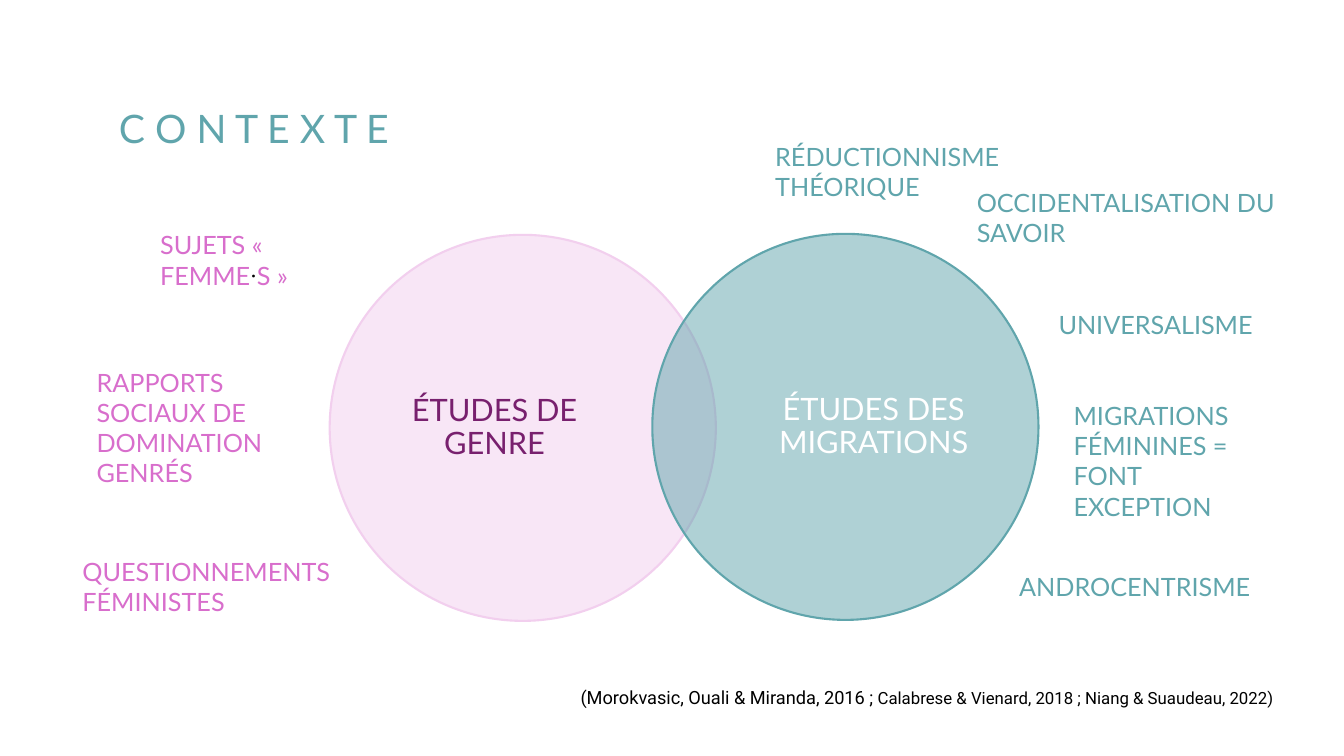
from lxml import etree
from pptx import Presentation
from pptx.dml.color import RGBColor
from pptx.enum.shapes import MSO_SHAPE
from pptx.enum.text import MSO_ANCHOR as ANCHOR, MSO_AUTO_SIZE as AUTO, PP_ALIGN as ALIGN
from pptx.oxml.ns import qn
from pptx.util import Inches, Pt

TEAL, PINK, PALE_PINK, PLUM = "60A5AC", "D86ECC", "F2CFEE", "78206E"
WHITE, BLACK = "FFFFFF", "000000"


def rgb(code):
    return RGBColor.from_string(code)


def write(frame, runs, frame_format, paragraph_format):
    """Fill a text frame with (text, font, size, colour) runs."""
    for name, value in frame_format.items():
        setattr(frame, name, value)
    paragraph = frame.paragraphs[0]
    for name, value in paragraph_format.items():
        setattr(paragraph, name, value)
    for text, font, size, color in runs:
        run = paragraph.add_run()
        run.text = text
        run.font.name = font
        run.font.size = Pt(size)
        run.font.color.rgb = rgb(color)


prs = Presentation()
prs.slide_width, prs.slide_height = Inches(13.33), Inches(7.5)
slide = prs.slides.add_slide(prs.slide_layouts[5])

# Title
title = slide.shapes.title
title_place = {"left": 1.08, "top": 0.57, "width": 11.5, "height": 1.45}
for side, length in title_place.items():
    setattr(title, side, Inches(length))
write(title.text_frame, [("C O N T E X T E", "Lato", 28, TEAL)],
      {"word_wrap": True, "auto_size": AUTO.NONE, "vertical_anchor": ANCHOR.MIDDLE},
      {"alignment": ALIGN.LEFT, "line_spacing": 0.9})

# Two overlapping circles, each with its field of study
fields = [
    # circle left, top, label left, top, label, fill, label colour
    (3.27, 2.33, 3.8, 2.78, "ÉTUDES DE GENRE", PALE_PINK, PLUM),
    (6.47, 2.32, 7.56, 2.77, "ÉTUDES DES MIGRATIONS", TEAL, WHITE),
]
label_frame = {"word_wrap": True, "vertical_anchor": ANCHOR.MIDDLE, "margin_left": 0,
               "margin_top": 0, "margin_right": 0, "margin_bottom": 0}
venn = slide.shapes.add_group_shape()
for left, top, label_left, label_top, field, color, label_color in fields:
    circle = venn.shapes.add_shape(MSO_SHAPE.OVAL, Inches(left), Inches(top),
                                   Inches(3.83), Inches(3.83))
    circle.shadow.inherit = False
    circle.fill.solid()
    circle.fill.fore_color.rgb = rgb(color)
    fill_color = circle.fill._xPr.find(qn("a:solidFill"))[0]
    etree.SubElement(fill_color, qn("a:alpha")).set("val", "50000")
    circle.line.color.rgb = rgb(color)
    circle.line.width = Pt(1.5)
    label = venn.shapes.add_textbox(Inches(label_left), Inches(label_top),
                                    Inches(2.21), Inches(2.93))
    write(label.text_frame, [(field, "Lato", 22, label_color)], label_frame,
          {"alignment": ALIGN.CENTER, "line_spacing": 0.9})

# Themes around the circles, and the references at the bottom
notions = [
    (1.49, 2.23, 1.89, 0.71, [("SUJETS « FEMME", "Lato", 18, PINK),
                              ("·", "Roboto", 18, BLACK),
                              ("S »", "Lato", 18, PINK)]),
    (0.86, 3.59, 2.37, 1.31, [("RAPPORTS SOCIAUX DE DOMINATION GENRÉS", "Lato", 18, PINK)]),
    (0.72, 5.47, 3.03, 0.71, [("QUESTIONNEMENTS FÉMINISTES", "Lato", 18, PINK)]),
    (7.59, 1.35, 2.82, 0.71, [("RÉDUCTIONNISME THÉORIQUE", "Lato", 18, TEAL)]),
    (9.59, 1.81, 3.16, 0.71, [("OCCIDENTALISATION DU SAVOIR", "Lato", 18, TEAL)]),
    (10.4, 3.02, 2.49, 0.4, [("UNIVERSALISME", "Lato", 18, TEAL)]),
    (10.55, 3.92, 1.96, 1.31, [("MIGRATIONS FÉMININES = FONT EXCEPTION", "Lato", 18, TEAL)]),
    (10.01, 5.62, 3.03, 0.4, [("ANDROCENTRISME", "Lato", 18, TEAL)]),
    (5.66, 6.76, 7.67, 0.74, [
        ("(Morokvasic, Ouali & Miranda, 2016 ; ", "Roboto", 13, BLACK),
        ("Calabrese & Vienard, 2018 ; Niang & Suaudeau, 2022)", "Roboto", 12, BLACK)]),
]
for left, top, width, height, runs in notions:
    notion = slide.shapes.add_textbox(Inches(left), Inches(top), Inches(width), Inches(height))
    write(notion.text_frame, runs,
          {"word_wrap": True, "auto_size": AUTO.SHAPE_TO_FIT_TEXT},
          {"alignment": ALIGN.LEFT})

prs.save("out.pptx")
